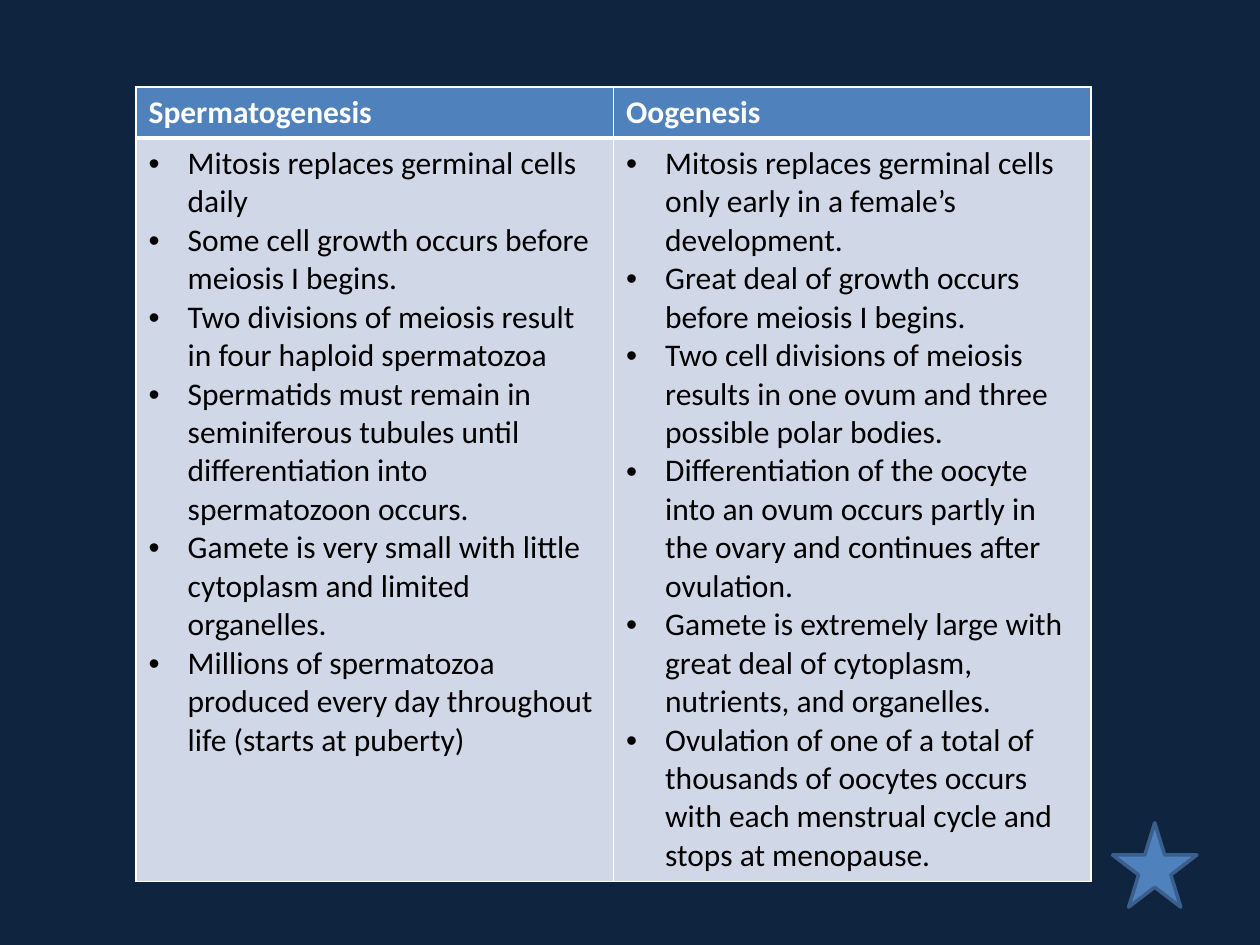
from lxml.etree import SubElement as Sub
from pptx import Presentation
from pptx.dml.color import RGBColor
from pptx.enum.shapes import MSO_SHAPE as Shape
from pptx.oxml.ns import qn
from pptx.util import Inches, Pt

SPERM = [
    "Mitosis replaces germinal cells daily",
    "Some cell growth occurs before meiosis I begins.",
    "Two divisions of meiosis result in four haploid spermatozoa",
    "Spermatids must remain in seminiferous tubules until "
    "differentiation into spermatozoon occurs.",
    "Gamete is very small with little cytoplasm and limited organelles.",
    "Millions of spermatozoa produced every day throughout life "
    "(starts at puberty)",
]
EGG = [
    "Mitosis replaces germinal cells only early in a female’s development.",
    "Great deal of growth occurs before meiosis I begins.",
    "Two cell divisions of meiosis results in one ovum and three possible "
    "polar bodies.",
    "Differentiation of the oocyte into an ovum occurs partly in the ovary "
    "and continues after ovulation.",
    "Gamete is extremely large with great deal of cytoplasm, nutrients, "
    "and organelles.",
    "Ovulation of one of a total of thousands of oocytes occurs with each "
    "menstrual cycle and stops at menopause.",
]
COLUMNS = {"Spermatogenesis": SPERM, "Oogenesis": EGG}


def color(code):
    return RGBColor.from_string(code)


class Page:
    FONT, SIZE = "Calibri", 18
    NAVY, BLUE, EDGE = "0F243E", "4F81BD", "3A5F8C"
    PALE, WHITE, BLACK = "D0D8E8", "FFFFFF", "000000"

    def __init__(self, deck):
        self.slide = deck.slides.add_slide(deck.slide_layouts[6])
        back = self.slide.background.fill
        back.solid()
        back.fore_color.rgb = color(self.NAVY)

    def table(self, left, top, width, rows, columns):
        grid = self.slide.shapes.add_table(
            len(rows), len(columns), Inches(left), Inches(top),
            Inches(width), Inches(sum(rows))).table
        for row, height in zip(grid.rows, rows):
            row.height = Inches(height)
        for col, (head, points) in enumerate(columns.items()):
            self.cell(grid.cell(0, col), [head], True)
            self.cell(grid.cell(1, col), points, False)

    def cell(self, cell, lines, head):
        cell.fill.solid()
        cell.fill.fore_color.rgb = color(self.BLUE if head else self.PALE)
        self.border(cell, "LRTB" if head else "LRB", 1)
        self.border(cell, "B" if head else "T", 3 if head else 3)
        frame = cell.text_frame
        frame.text = "\n".join(lines)
        for para in frame.paragraphs:
            font = para.font
            font.name, font.size, font.bold = self.FONT, Pt(self.SIZE), head
            font.color.rgb = color(self.WHITE if head else self.BLACK)
            if not head:
                self.bullet(para)

    def border(self, cell, sides, width):
        props = cell._tc.get_or_add_tcPr()
        for side in sides:
            for old in props.findall(qn(f"a:ln{side}")):
                props.remove(old)
            line = Sub(props, qn(f"a:ln{side}"), w=str(Pt(width)))
            fill = Sub(line, qn("a:solidFill"))
            Sub(fill, qn("a:srgbClr"), val=self.WHITE)
        # The schema wants the borders as L, R, T, B and then the fill.
        order = [qn(f"a:ln{side}") for side in "LRTB"] + [qn("a:solidFill")]
        props[:] = sorted(props, key=lambda part: order.index(part.tag))

    def bullet(self, para):
        props = para._p.get_or_add_pPr()
        indent = Inches(0.31)
        props.set("marL", str(indent))
        props.set("indent", str(-indent))
        mark = props.makeelement(qn("a:buFont"), {"typeface": "Arial"})
        props.insert(0, mark)
        mark.addnext(props.makeelement(qn("a:buChar"), {"char": "•"}))

    def star(self, left, top, size):
        star = self.slide.shapes.add_shape(
            Shape.STAR_5_POINT, Inches(left), Inches(top),
            Inches(size), Inches(size))
        star.shadow.inherit = False
        star.fill.solid()
        star.fill.fore_color.rgb = color(self.BLUE)
        star.line.color.rgb = color(self.EDGE)
        star.line.width = Pt(2)


def main():
    deck = Presentation()
    deck.slide_width, deck.slide_height = Inches(10), Inches(7.5)
    page = Page(deck)
    page.star(8.83, 6.53, 0.67)
    page.table(1.08, 0.69, 7.58, [0.4, 5.9], COLUMNS)
    deck.save("out.pptx")


if __name__ == "__main__":
    main()
